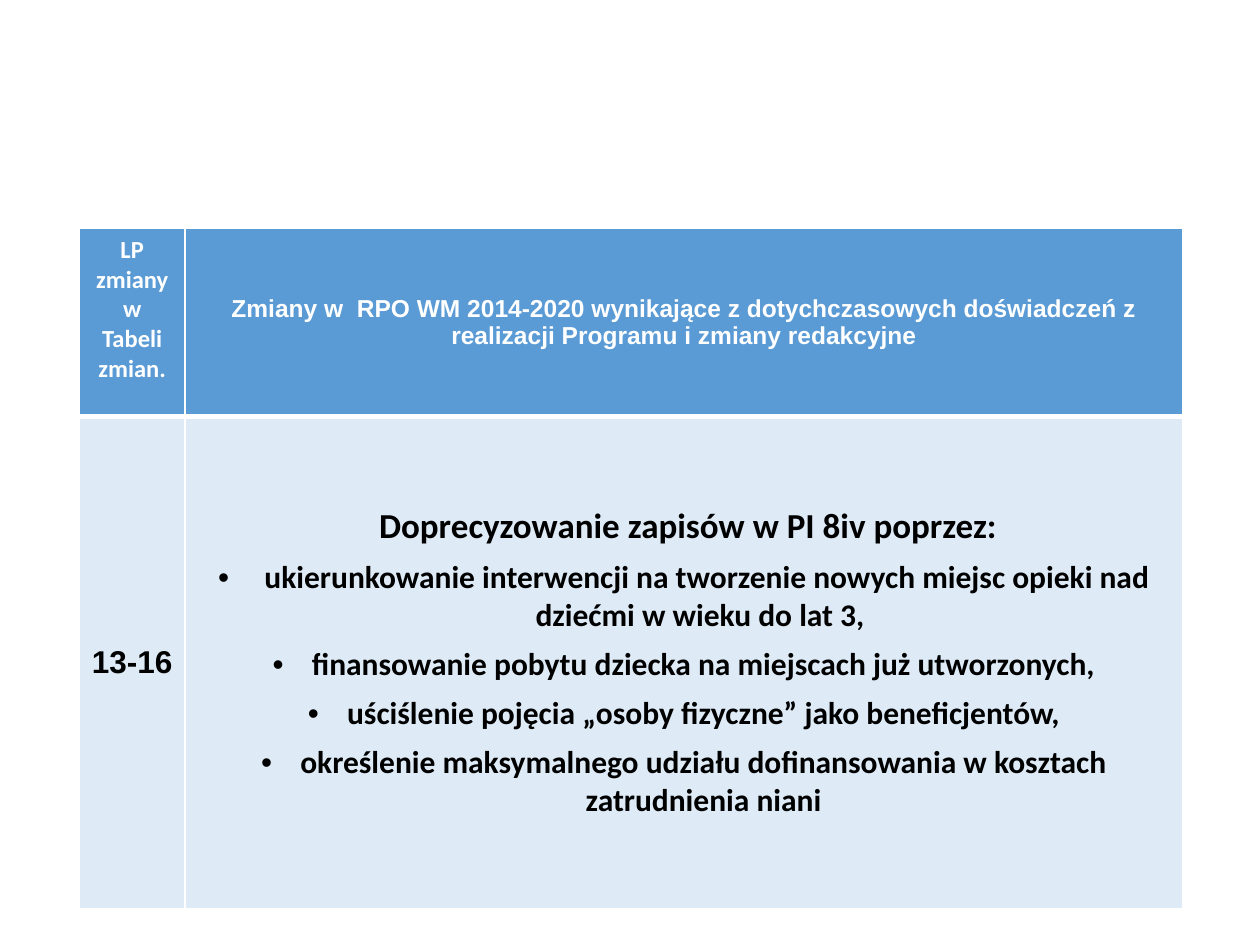
import pptx
import pptx.dml.color
import pptx.enum.text
import pptx.util
from lxml import etree
from pptx.oxml.ns import qn

Cm, Pt = pptx.util.Cm, pptx.util.Pt
ALIGN = pptx.enum.text.PP_ALIGN
ANCHOR = pptx.enum.text.MSO_ANCHOR

WHITE, BLACK, BLUE, PALE = "FFFFFF", "000000", "5B9BD5", "DEEBF7"
BULLETS = [
    " ukierunkowanie interwencji na tworzenie nowych miejsc opieki nad dziećmi w wieku do lat 3, ",
    "finansowanie pobytu dziecka na miejscach już utworzonych,",
    "uściślenie pojęcia „osoby fizyczne” jako beneficjentów,",
    "określenie maksymalnego udziału dofinansowania w kosztach zatrudnienia niani",
]


def color(hex_value):
    return pptx.dml.color.RGBColor.from_string(hex_value)


def set_attributes(target, values):
    for name, value in values.items():
        setattr(target, name, value)


def add_bullet(para):
    properties = para._p.get_or_add_pPr()
    properties.set("marL", str(Cm(0.79)))
    properties.set("indent", str(-Cm(0.79)))
    etree.SubElement(properties, qn("a:buFont")).set("typeface", "Arial")
    etree.SubElement(properties, qn("a:buChar")).set("char", "•")


def write(para, text, size, font, ink, **layout):
    set_attributes(para, layout)
    span = para.add_run()
    span.text = text
    set_attributes(span.font, {"size": Pt(size), "name": font, "bold": True})
    span.font.color.rgb = color(ink)


def style_cell(cell, fill, top, bottom, **layout):
    # Borders come before the fill in the cell properties
    properties = cell._tc.get_or_add_tcPr()
    for side, width in {"L": 1, "R": 1, "T": top, "B": bottom}.items():
        line = etree.SubElement(properties, qn("a:ln" + side), w=str(Pt(width)))
        solid = etree.SubElement(line, qn("a:solidFill"))
        etree.SubElement(solid, qn("a:srgbClr"), val=WHITE)
    cell.fill.solid()
    cell.fill.fore_color.rgb = color(fill)
    set_attributes(cell, layout)


def fill_header(number, title):
    style_cell(number, BLUE, 1, 3, vertical_anchor=ANCHOR.TOP)
    style_cell(title, BLUE, 1, 3, vertical_anchor=ANCHOR.MIDDLE)
    write(number.text_frame.paragraphs[0], "LP zmiany w Tabeli zmian.",
          14, "Calibri", WHITE, alignment=ALIGN.CENTER)
    write(title.text_frame.paragraphs[0],
          "Zmiany w  RPO WM 2014-2020 wynikające z dotychczasowych "
          "doświadczeń z realizacji Programu i zmiany redakcyjne",
          14, "Arial", WHITE, alignment=ALIGN.CENTER)


def fill_change(number, details):
    style_cell(number, PALE, 3, 1, vertical_anchor=ANCHOR.MIDDLE, margin_right=Cm(0.2))
    style_cell(details, PALE, 3, 1, vertical_anchor=ANCHOR.MIDDLE,
               margin_top=0, margin_bottom=0)
    write(number.text_frame.paragraphs[0], "13-16", 18, "Arial", BLACK,
          alignment=ALIGN.LEFT)
    layout = {"alignment": ALIGN.CENTER, "space_after": Pt(6)}
    frame = details.text_frame
    write(frame.paragraphs[0], " Doprecyzowanie zapisów w PI 8iv poprzez:",
          20, "Calibri", BLACK, **layout)
    for text in BULLETS:
        para = frame.add_paragraph()
        add_bullet(para)
        write(para, text, 18, "Calibri", BLACK, **layout)


def add_changes_table(page, left, top, width, height):
    number_width, header_height = Cm(2.13), Cm(3.79)
    table = page.shapes.add_table(2, 2, left, top, width, height).table
    table.columns[0].width = number_width
    table.columns[1].width = width - number_width
    table.rows[0].height = header_height
    table.rows[1].height = height - header_height
    fill_header(table.cell(0, 0), table.cell(0, 1))
    fill_change(table.cell(1, 0), table.cell(1, 1))


def main():
    deck = pptx.Presentation()
    set_attributes(deck, {"slide_width": Cm(25.4), "slide_height": Cm(19.05)})
    page = deck.slides.add_slide(deck.slide_layouts[6])
    add_changes_table(page, Cm(1.6), Cm(4.61), Cm(22.25), Cm(13.7))
    deck.save("out.pptx")


if __name__ == "__main__":
    main()
